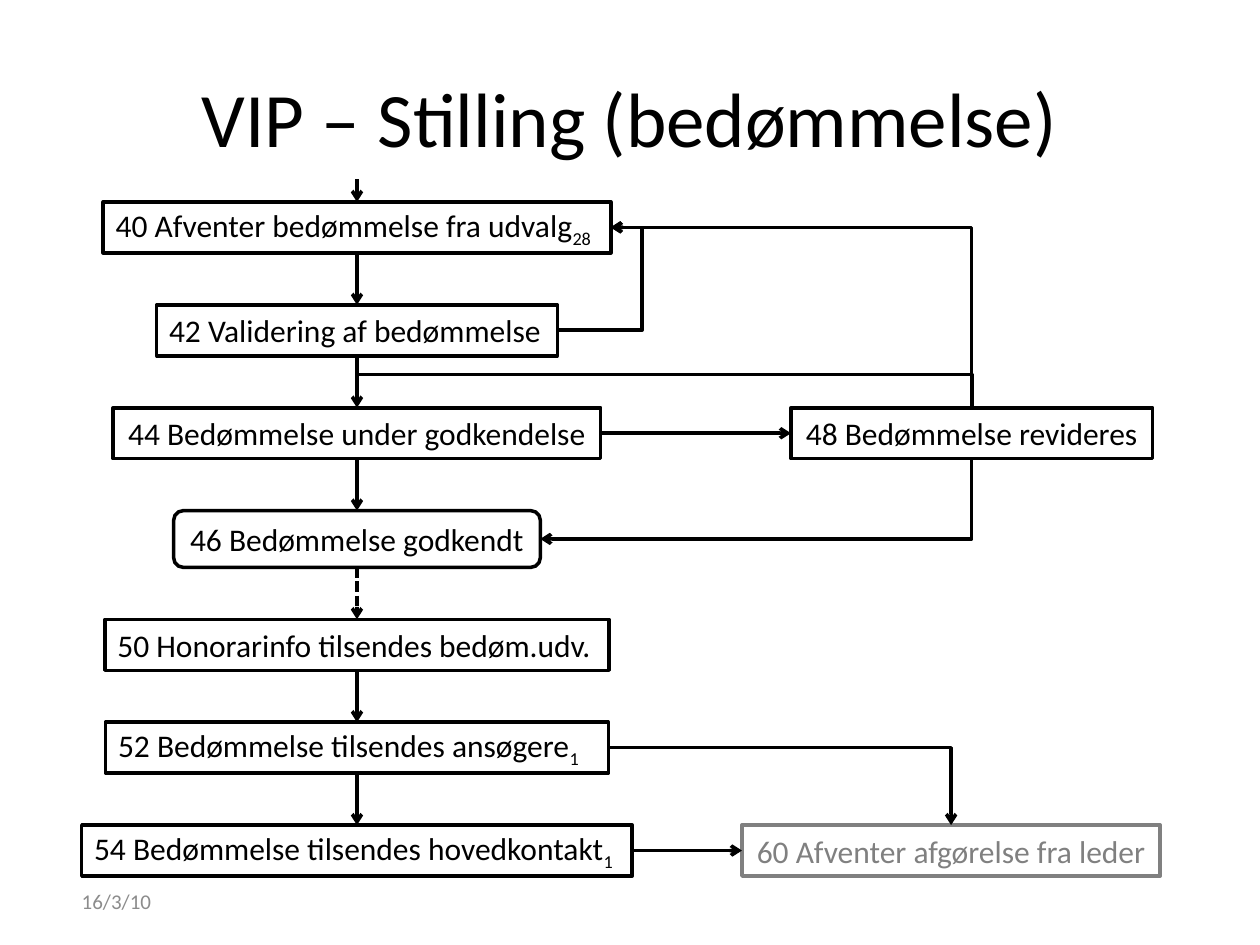
from lxml import etree
from pptx import Presentation
from pptx.dml.color import RGBColor
from pptx.enum.dml import MSO_LINE
from pptx.enum.shapes import MSO_CONNECTOR, MSO_SHAPE
from pptx.enum.text import MSO_ANCHOR, MSO_AUTO_SIZE, PP_ALIGN
from pptx.oxml.ns import qn
from pptx.util import Pt

STRAIGHT, ELBOW = MSO_CONNECTOR.STRAIGHT, MSO_CONNECTOR.ELBOW
PROCESS = MSO_SHAPE.FLOWCHART_PROCESS
ROUNDED = MSO_SHAPE.FLOWCHART_ALTERNATE_PROCESS
LEFT, CENTER = PP_ALIGN.LEFT, PP_ALIGN.CENTER
MIDDLE = MSO_ANCHOR.MIDDLE
FIT = MSO_AUTO_SIZE.SHAPE_TO_FIT_TEXT
DASH = MSO_LINE.SQUARE_DOT
TOP, LEFT_SIDE, BOTTOM, RIGHT_SIDE = range(4)
BLACK, GREY, DATE_GREY = "000000", "808080", "8C8C8C"
BOX_H, ROUNDED_H, GAP = 29.1, 32.4, 29.7


def rgb(color):
    return RGBColor.from_string(color)


def write(tf, text, size=18, color=BLACK, align=LEFT, sub="", wrap=True):
    tf.word_wrap = wrap
    tf.vertical_anchor = MIDDLE
    p = tf.paragraphs[0]
    p.alignment = align
    for part in filter(None, (text, sub)):
        r = p.add_run()
        r.text = part
        r.font.name = "Calibri"
        r.font.size = Pt(size)
        r.font.color.rgb = rgb(color)
        if part == sub:
            r._r.get_or_add_rPr().set("baseline", "-25000")


def add_box(s, x, y, w, text, h=BOX_H, kind=PROCESS, color=BLACK, align=LEFT, sub=""):
    sp = s.shapes.add_shape(kind, Pt(x), Pt(y), Pt(w), Pt(h))
    sp.shadow.inherit = False
    sp.fill.background()
    sp.line.color.rgb = rgb(color)
    sp.line.width = Pt(2)
    write(sp.text_frame, text, color=color, align=align, sub=sub, wrap=False)
    sp.text_frame.auto_size = FIT
    return sp


def side(sp, site):
    if site in (TOP, BOTTOM):
        return sp.left + sp.width // 2, sp.top + (sp.height if site == BOTTOM else 0)
    return sp.left + (sp.width if site == RIGHT_SIDE else 0), sp.top + sp.height // 2


def add_line(s, start, end, kind=STRAIGHT, arrow="tailEnd", dash=None):
    c = s.shapes.add_connector(kind, *start, *end)
    c.line.color.rgb = rgb(BLACK)
    c.line.width = Pt(2)
    if dash:
        c.line.dash_style = dash
    if arrow:
        etree.SubElement(c.line._get_or_add_ln(), qn("a:" + arrow), type="arrow")
    etree.SubElement(c._element.spPr, qn("a:effectLst"))
    return c


def join(s, a, a_site, b, b_site, dash=None):
    c = add_line(s, side(a, a_site), side(b, b_site), dash=dash)
    c.begin_connect(a, a_site)
    c.end_connect(b, b_site)


def add_corner(s, start, end, arrow="headEnd"):
    c = add_line(s, start, end, ELBOW, arrow)
    c._element.spPr.find(qn("a:prstGeom")).set("prst", "bentConnector2")


def add_detour(s, start, end, ratio):
    c = add_line(s, start, end, ELBOW)
    geom = c._element.spPr.find(qn("a:prstGeom"))
    guides = geom.find(qn("a:avLst"))
    if guides is None:
        guides = etree.SubElement(geom, qn("a:avLst"))
    etree.SubElement(guides, qn("a:gd"), name="adj1", fmla=f"val {round(ratio * 100000)}")


def add_main_flow(s, center, top):
    steps = [
        (290, "40 Afventer bedømmelse fra udvalg", dict(sub="28")),
        (229, "42 Validering af bedømmelse", {}),
        (278.6, "44 Bedømmelse under godkendelse", dict(align=CENTER)),
        (209.5, "46 Bedømmelse godkendt", dict(align=CENTER, kind=ROUNDED, h=ROUNDED_H)),
        (288, "50 Honorarinfo tilsendes bedøm.udv.", {}),
        (287.3, "52 Bedømmelse tilsendes ansøgere", dict(sub="1")),
        (314.6, "54 Bedømmelse tilsendes hovedkontakt", dict(sub="1")),
    ]
    boxes, y = {}, top
    for w, text, style in steps:
        boxes[text[:2]] = add_box(s, center - w / 2, y, w, text, **style)
        y += style.get("h", BOX_H) + GAP
    add_line(s, (Pt(center), Pt(top - 13)), (Pt(center), Pt(top)))
    column = list(boxes.values())
    for a, b in zip(column, column[1:]):
        join(s, a, BOTTOM, b, TOP, dash=DASH if a is boxes["46"] else None)
    return boxes


def add_side_steps(s, boxes):
    revise = add_box(s, 452, boxes["44"].top.pt, 206.6, "48 Bedømmelse revideres", align=CENTER)
    leader = add_box(s, 424, boxes["54"].top.pt, 239, "60 Afventer afgørelse fra leder",
                     color=GREY, align=CENTER)
    join(s, boxes["44"], RIGHT_SIDE, revise, LEFT_SIDE)
    join(s, boxes["54"], RIGHT_SIDE, leader, LEFT_SIDE)
    add_corner(s, side(boxes["40"], RIGHT_SIDE), side(revise, TOP))
    add_corner(s, side(boxes["46"], RIGHT_SIDE), side(revise, BOTTOM))
    add_corner(s, side(boxes["52"], RIGHT_SIDE), side(leader, TOP), arrow="tailEnd")
    x, y = side(boxes["44"], TOP)
    add_corner(s, (x, y - Pt(19)), side(revise, TOP), arrow=None)
    add_detour(s, side(boxes["42"], RIGHT_SIDE), side(boxes["40"], RIGHT_SIDE), 1.59)


def add_title(s, x, y, w, h):
    sp = s.shapes.title
    sp.left, sp.top, sp.width, sp.height = Pt(x), Pt(y), Pt(w), Pt(h)
    write(sp.text_frame, "VIP – Stilling (bedømmelse)", size=44, align=CENTER)


def add_date(s, x, y, w, h):
    sp = s.shapes.add_textbox(Pt(x), Pt(y), Pt(w), Pt(h))
    write(sp.text_frame, "16/3/10", size=12, color=DATE_GREY)


def main():
    prs = Presentation()
    prs.slide_width, prs.slide_height = Pt(720), Pt(540)
    s = prs.slides.add_slide(prs.slide_layouts[5])
    add_title(s, 36, 21.6, 648, 90)
    boxes = add_main_flow(s, 204, 115.4)
    add_side_steps(s, boxes)
    add_date(s, 39.6, 500.5, 168, 28.8)
    prs.save("out.pptx")


if __name__ == "__main__":
    main()
